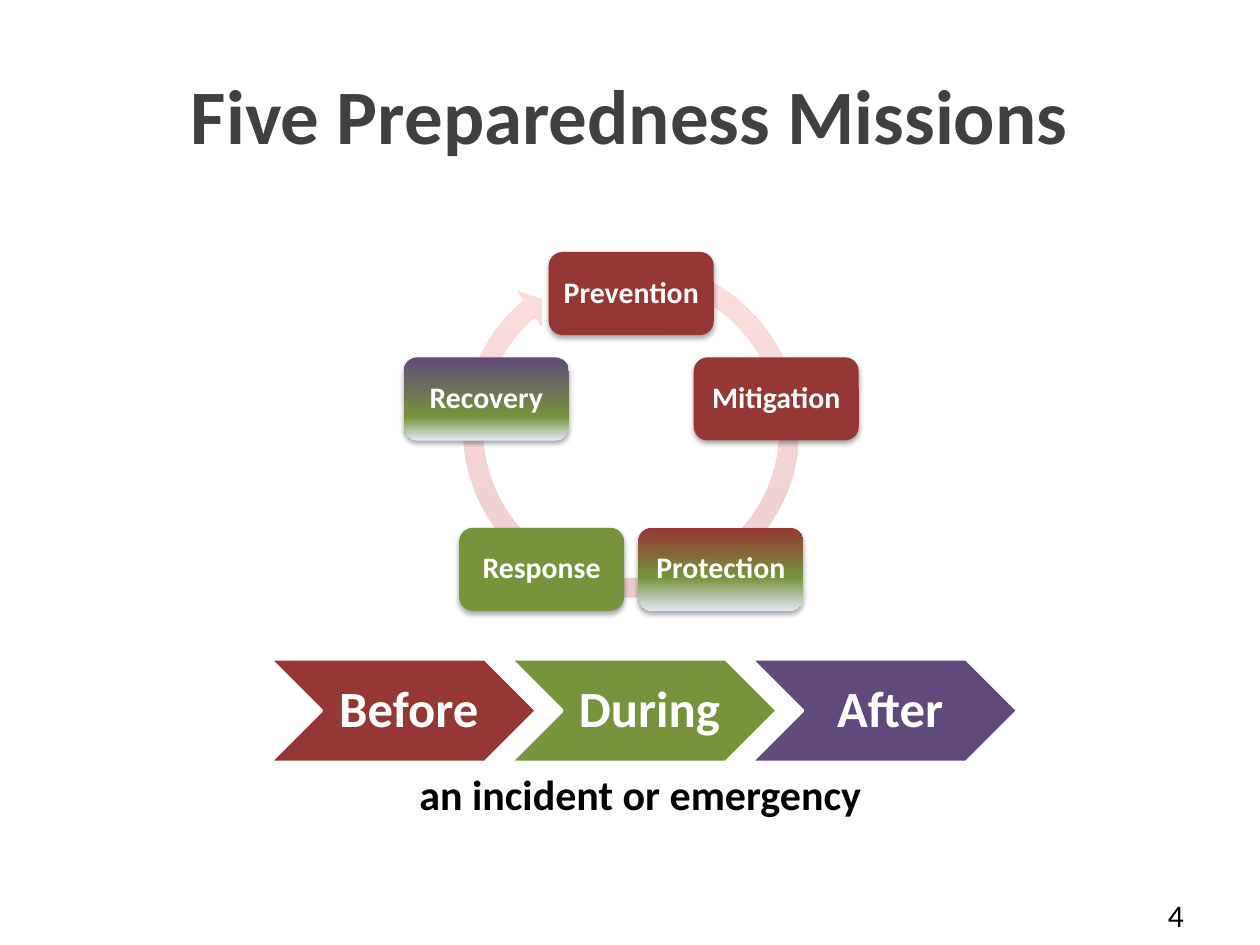
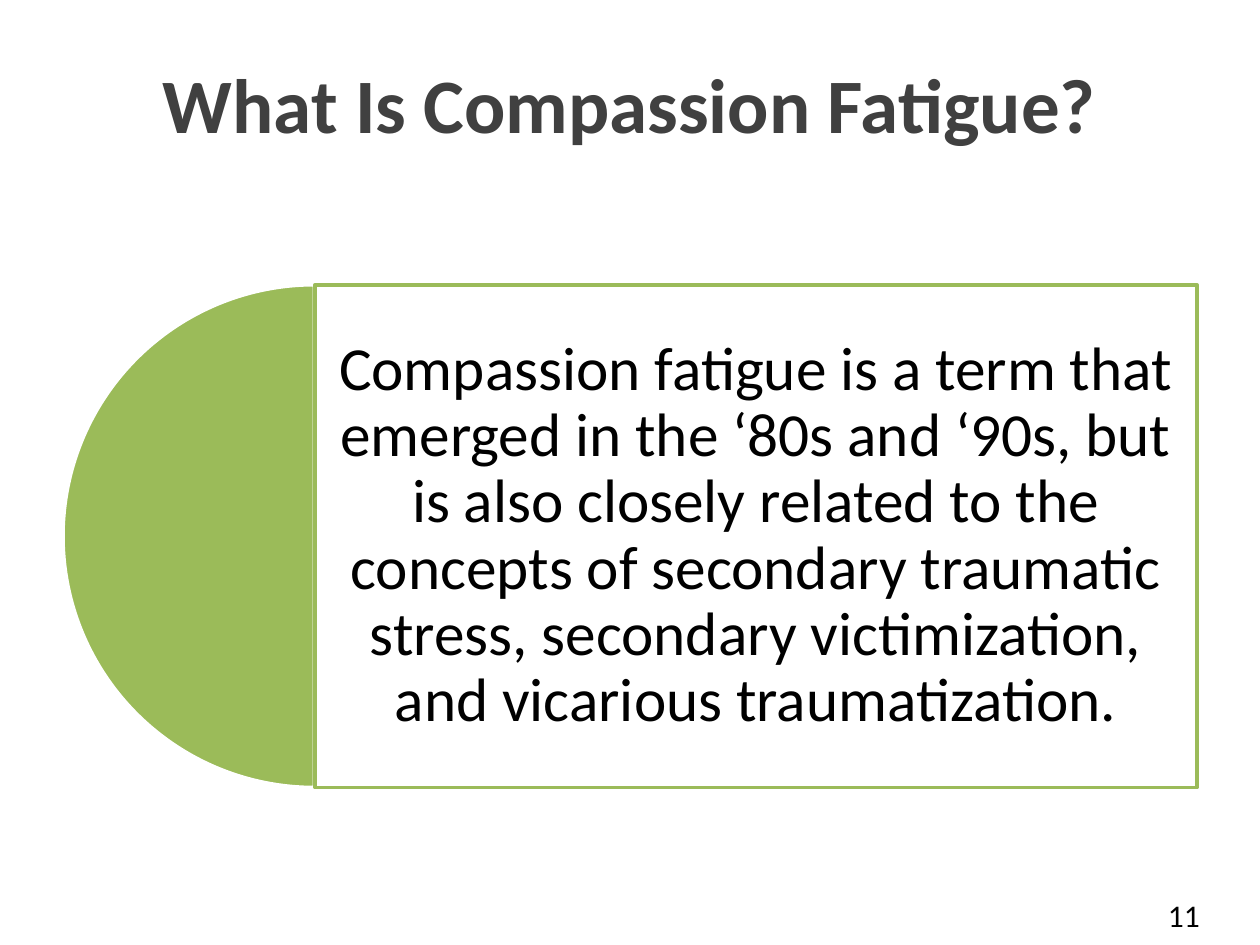
import math
from dataclasses import dataclass

import lxml.etree
import pptx
import pptx.dml.color
import pptx.enum.shapes
import pptx.enum.text
import pptx.oxml.ns
import pptx.util

Inches = pptx.util.Inches
Pt = pptx.util.Pt
Color = pptx.dml.color.RGBColor.from_string
Shape = pptx.enum.shapes.MSO_SHAPE
Align = pptx.enum.text.PP_ALIGN
Anchor = pptx.enum.text.MSO_ANCHOR
qn = pptx.oxml.ns.qn
SubElement = lxml.etree.SubElement


@dataclass(frozen=True)
class Theme:
    font: str = "Calibri"
    heading: str = "404040"
    text: str = "000000"
    white: str = "FFFFFF"
    red: str = "953735"
    green: str = "77933C"
    purple: str = "604A7B"
    lime: str = "9BBB59"
    mist: str = "E1E8F5"
    ring_bottom: str = "ECCCCC"
    ring_top: str = "FFDEDE"
    title_size: int = 44
    body_size: int = 35
    stage_size: int = 29
    caption_size: int = 24
    page_size: int = 18
    mission_size: int = 17


theme = Theme()


def write(shape, text, size, color, bold=False, align=Align.CENTER, anchor=Anchor.MIDDLE, margins=(0.1, 0.05), spacing=None):
    frame = shape.text_frame
    frame.word_wrap = True
    frame.vertical_anchor = anchor
    frame.margin_left = frame.margin_right = Inches(margins[0])
    frame.margin_top = frame.margin_bottom = Inches(margins[1])
    para = frame.paragraphs[0]
    para.text = text
    para.alignment = align
    para.line_spacing = spacing
    para.font.name = theme.font
    para.font.size = Pt(size)
    para.font.bold = bold
    para.font.color.rgb = Color(color)


def paint(shape, stops, angle=90, line=None):
    shape.shadow.inherit = False
    if len(stops) == 1:
        shape.fill.solid()
        shape.fill.fore_color.rgb = Color(stops[0][1])
    else:
        shape.fill.gradient()
        gradient = shape._element.spPr.find(qn("a:gradFill"))
        stop_list = gradient.find(qn("a:gsLst"))
        for stop in list(stop_list):
            stop_list.remove(stop)
        for position, color in stops:
            stop = SubElement(stop_list, qn("a:gs"), pos=str(position * 1000))
            SubElement(stop, qn("a:srgbClr"), val=color)
        gradient.find(qn("a:lin")).set("ang", str(angle * 60000))
    if line:
        shape.line.color.rgb = Color(line)
        shape.line.width = Pt(2)
    else:
        shape.line.fill.background()


deck = pptx.Presentation()
deck.slide_width = Inches(10)
deck.slide_height = Inches(7.5)

slides = []
for title, title_height, page in [
    ("Five Preparedness Missions", 1.42, "4"),
    ("What Is Compassion Fatigue?", 1.25, "11"),
]:
    slide = deck.slides.add_slide(deck.slide_layouts[5])
    heading = slide.shapes.title
    heading.left, heading.top = Inches(0.5), Inches(0.19)
    heading.width, heading.height = Inches(9), Inches(title_height)
    write(heading, title, theme.title_size, theme.heading, bold=True)
    number = slide.shapes.add_textbox(Inches(9.17), Inches(7.06), Inches(0.55), Inches(0.44))
    write(number, page, theme.page_size, theme.text, align=Align.LEFT, anchor=Anchor.TOP)
    slides.append(slide)
missions_slide, fatigue_slide = slides

ring = missions_slide.shapes.add_shape(
    Shape.CIRCULAR_ARROW, Inches(3.59), Inches(1.99), Inches(2.84), Inches(2.84)
)
for index, value in enumerate([0.055, 3.307, 137.992, 173.718, 0.058]):
    ring.adjustments[index] = value
paint(ring, [(0, theme.ring_bottom), (100, theme.ring_top)], angle=270)

center_x, center_y, radius = 5.01, 3.54, 1.21
mission_width, mission_height = 1.31, 0.66
missions = [
    ("Prevention", [(0, theme.red)]),
    ("Mitigation", [(0, theme.red)]),
    ("Protection", [(0, theme.red), (60, theme.green), (100, theme.mist)]),
    ("Response", [(0, theme.green)]),
    ("Recovery", [(0, theme.purple), (72, theme.green), (100, theme.mist)]),
]
for index, (name, stops) in enumerate(missions):
    angle = 2 * math.pi * index / len(missions)
    box = missions_slide.shapes.add_shape(
        Shape.ROUNDED_RECTANGLE,
        Inches(center_x + radius * math.sin(angle) - mission_width / 2),
        Inches(center_y - radius * math.cos(angle) - mission_height / 2),
        Inches(mission_width),
        Inches(mission_height),
    )
    paint(box, stops)
    effects = box._element.spPr.find(qn("a:effectLst"))
    shadow = SubElement(
        effects, qn("a:outerShdw"), blurRad=str(Pt(3.1)), dist=str(Pt(1.8)), dir="5400000", rotWithShape="0"
    )
    shade = SubElement(shadow, qn("a:srgbClr"), val=theme.text)
    SubElement(shade, qn("a:alpha"), val="35000")
    write(box, name, theme.mission_size, theme.white, bold=True, margins=(0.05, 0.05), spacing=0.9)

stages = [("Before", theme.red), ("During", theme.green), ("After", theme.purple)]
for index, (name, color) in enumerate(stages):
    chevron = missions_slide.shapes.add_shape(
        Shape.CHEVRON, Inches(2.14 + 1.91 * index), Inches(5.23), Inches(2.12), Inches(0.82)
    )
    paint(chevron, [(0, color)], line=theme.white)
    write(chevron, name, theme.stage_size, theme.white, bold=True, margins=(0.04, 0.04), spacing=0.9)
    chevron.text_frame.margin_left = Inches(0.13)

caption = missions_slide.shapes.add_textbox(Inches(3.23), Inches(6.05), Inches(3.75), Inches(0.5))
write(caption, "an incident or emergency", theme.caption_size, theme.text, bold=True, align=Align.LEFT, anchor=Anchor.TOP)

half_disc = fatigue_slide.shapes.add_shape(Shape.PIE, Inches(0.5), Inches(2.26), Inches(3.99), Inches(3.99))
half_disc.adjustments[0] = 54
half_disc.adjustments[1] = 162
paint(half_disc, [(0, theme.lime)], line=theme.white)

definition = fatigue_slide.shapes.add_shape(Shape.RECTANGLE, Inches(2.5), Inches(2.26), Inches(7), Inches(3.99))
paint(definition, [(0, theme.white)], line=theme.lime)
fill_color = definition._element.spPr.find(qn("a:solidFill")).find(qn("a:srgbClr"))
SubElement(fill_color, qn("a:alpha"), val="90000")
write(
    definition,
    "Compassion fatigue is a term that emerged in the ‘80s and ‘90s, but is also closely related to the "
    "concepts of secondary traumatic stress, secondary victimization, and vicarious traumatization.",
    theme.body_size,
    theme.text,
    margins=(0.15, 0.15),
    spacing=0.9,
)

deck.save("out.pptx")
